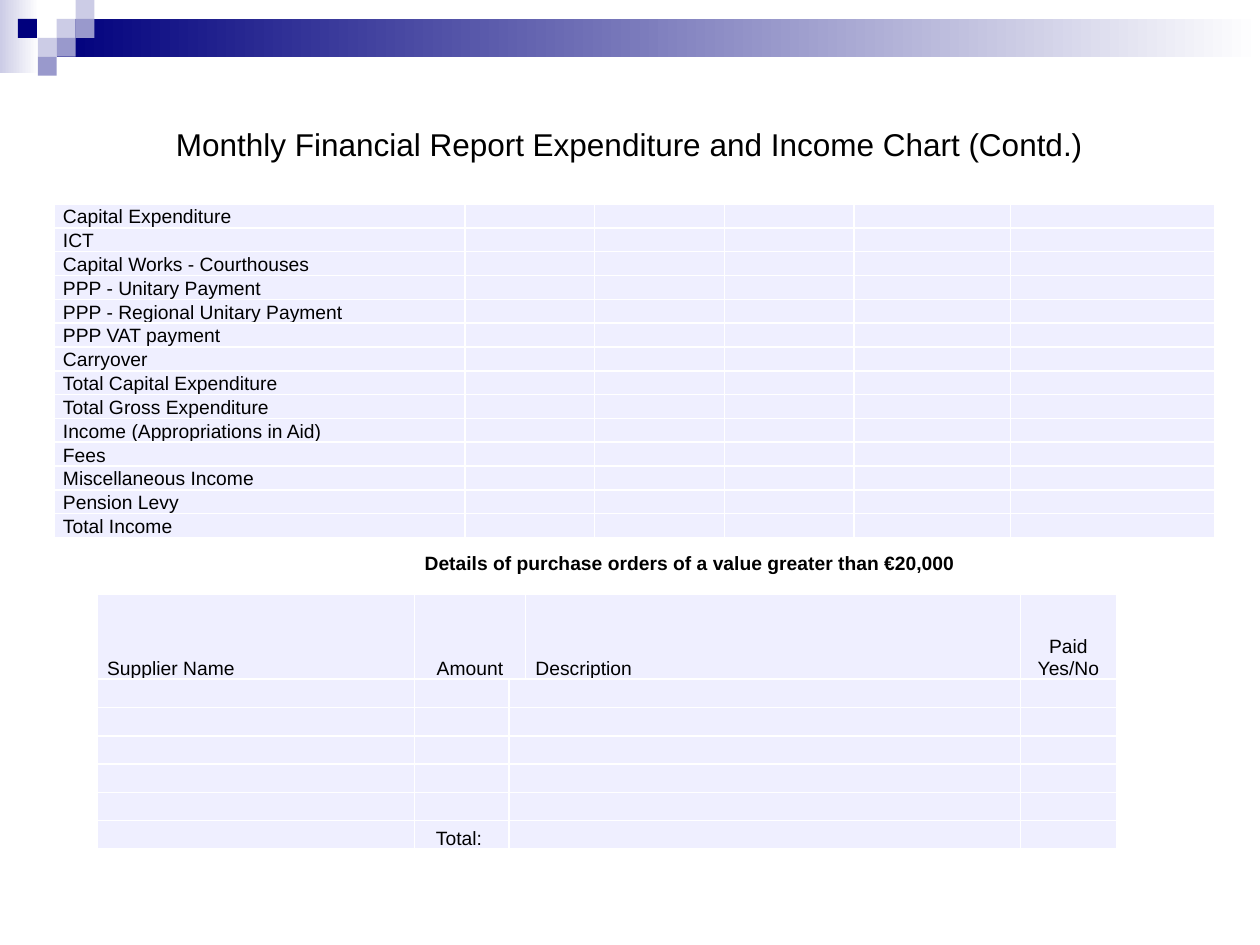
from lxml.etree import SubElement
from pptx import Presentation
from pptx.dml.color import RGBColor
from pptx.enum.shapes import MSO_SHAPE
from pptx.enum.text import MSO_ANCHOR, PP_ALIGN
from pptx.oxml.ns import qn
from pptx.util import Inches, Pt

COLORS = {"navy": "00007D", "mid": "9999CC", "pale": "CCCCE6",
          "cell": "EFEFFF", "white": "FFFFFF", "text": "000000"}
FONT = "Arial"
TITLE = "Monthly Financial Report Expenditure and Income Chart (Contd.)"
SUBTITLE = "Details of purchase orders of a value greater than €20,000"
BANDS = [((0, 0, 0.31, 0.58), "pale"), ((0.45, 0.15, 9.55, 0.3), "navy")]
TILE = 0.15
TILES = [(3, 1, "pale"), (4, 0, "pale"), (4, 1, "mid"), (2, 2, "pale"),
         (0.95, 1, "navy"), (3, 2, "mid"), (2, 3, "mid")]
BUDGET_LINES = [
    "Capital Expenditure", "ICT", "Capital Works - Courthouses",
    "PPP - Unitary Payment", "PPP - Regional Unitary Payment",
    "PPP VAT payment", "Carryover", "Total Capital Expenditure",
    "Total Gross Expenditure", "Income (Appropriations in Aid)", "Fees",
    "Miscellaneous Income", "Pension Levy", "Total Income",
]
BUDGET_COLS = [3.26, 1.03, 1.03, 1.03, 1.24, 1.62]
BUDGET_HEIGHT = 2.6
ORDER_ROWS = ([["Supplier Name", "Amount", "", "Description", "Paid Yes/No"]]
              + [[""] * 5] * 5 + [["", "Total: ", "", "", ""]])
ORDER_COLS = [2.52, 0.75, 0.13, 3.93, 0.76]
ORDER_HEADER, ORDER_HEIGHT = 0.67, 2.02
CENTERED = {"Amount", "Paid Yes/No", "Total: "}


def rgb(name):
    """Return the named colour."""
    return RGBColor.from_string(COLORS[name])


def add_block(slide, box, color, fade=False):
    """Add a plain rectangle, optionally fading to white."""
    s = slide.shapes.add_shape(MSO_SHAPE.RECTANGLE, *map(Inches, box))
    s.shadow.inherit = False
    s.line.fill.background()
    if fade:
        s.fill.gradient()
        s.fill.gradient_angle = 0
        for stop, name in zip(s.fill.gradient_stops, (color, "white")):
            stop.color.rgb = rgb(name)
    else:
        s.fill.solid()
        s.fill.fore_color.rgb = rgb(color)


def style_runs(p, size, bold=False):
    """Format every run of a paragraph."""
    for r in p.runs:
        r.font.name, r.font.size, r.font.bold = FONT, Pt(size), bold
        r.font.color.rgb = rgb("text")


def add_text(slide, box, text, size, bold=False, align=PP_ALIGN.LEFT, indent=0.1):
    """Add a one-line text box."""
    sp = slide.shapes.add_textbox(*map(Inches, box))
    tf = sp.text_frame
    tf.word_wrap = True
    tf.margin_left = Inches(indent)
    tf.text = text
    p = tf.paragraphs[0]
    p.alignment = align
    style_runs(p, size, bold)


def style_cell(cell, text, inset):
    """Fill, border and label one table cell."""
    cell.margin_left = cell.margin_right = Inches(inset)
    cell.margin_top = cell.margin_bottom = 0
    cell.vertical_anchor = MSO_ANCHOR.BOTTOM
    tc_pr = cell._tc.get_or_add_tcPr()
    for side in ("lnL", "lnR", "lnT", "lnB"):
        ln = SubElement(tc_pr, qn(f"a:{side}"), w=str(Pt(1)))
        solid = SubElement(ln, qn("a:solidFill"))
        SubElement(solid, qn("a:srgbClr"), val=COLORS["white"])
    cell.fill.solid()
    cell.fill.fore_color.rgb = rgb("cell")
    p = cell.text_frame.paragraphs[0]
    if text:
        p.text = text
        p.alignment = PP_ALIGN.CENTER if text in CENTERED else PP_ALIGN.LEFT
        style_runs(p, 11)
    else:
        SubElement(p._p, qn("a:endParaRPr"), sz="1100")


def add_grid(slide, left, top, cols, heights, rows, inset):
    """Add a styled table and return it."""
    frame = slide.shapes.add_table(
        len(rows), len(cols),
        *map(Inches, (left, top, sum(cols), sum(heights))))
    table = frame.table
    table.first_row = table.horz_banding = False
    for column, width in zip(table.columns, cols):
        column.width = Inches(width)
    for i, (height, texts) in enumerate(zip(heights, rows)):
        table.rows[i].height = Inches(height)
        for j, text in enumerate(texts):
            style_cell(table.cell(i, j), text, inset)
    return table


def main():
    """Build the financial report slide."""
    prs = Presentation()
    prs.slide_width, prs.slide_height = Inches(10), Inches(7.5)
    slide = prs.slides.add_slide(prs.slide_layouts[6])

    for box, color in BANDS:
        add_block(slide, box, color, fade=True)
    for col, row, color in TILES:
        add_block(slide, (col * TILE, row * TILE, TILE, TILE), color)

    n = len(BUDGET_LINES)
    budget_rows = [[label] + [""] * (len(BUDGET_COLS) - 1) for label in BUDGET_LINES]
    add_grid(slide, 0.43, 1.62, BUDGET_COLS, [BUDGET_HEIGHT / n] * n, budget_rows, 0.07)
    add_text(slide, (0.27, 0.94, 9.45, 0.4), TITLE, 18, align=PP_ALIGN.CENTER)

    body = len(ORDER_ROWS) - 1
    heights = [ORDER_HEADER] + [(ORDER_HEIGHT - ORDER_HEADER) / body] * body
    orders = add_grid(slide, 0.77, 4.72, ORDER_COLS, heights, ORDER_ROWS, 0.08)
    for i in range(len(ORDER_ROWS)):
        first = 1 if i == 0 else 2
        orders.cell(i, first).merge(orders.cell(i, first + 1))
    add_text(slide, (0.27, 4.33, 9.45, 0.3), SUBTITLE, 11, bold=True, indent=3.1)

    prs.save("out.pptx")


if __name__ == "__main__":
    main()
